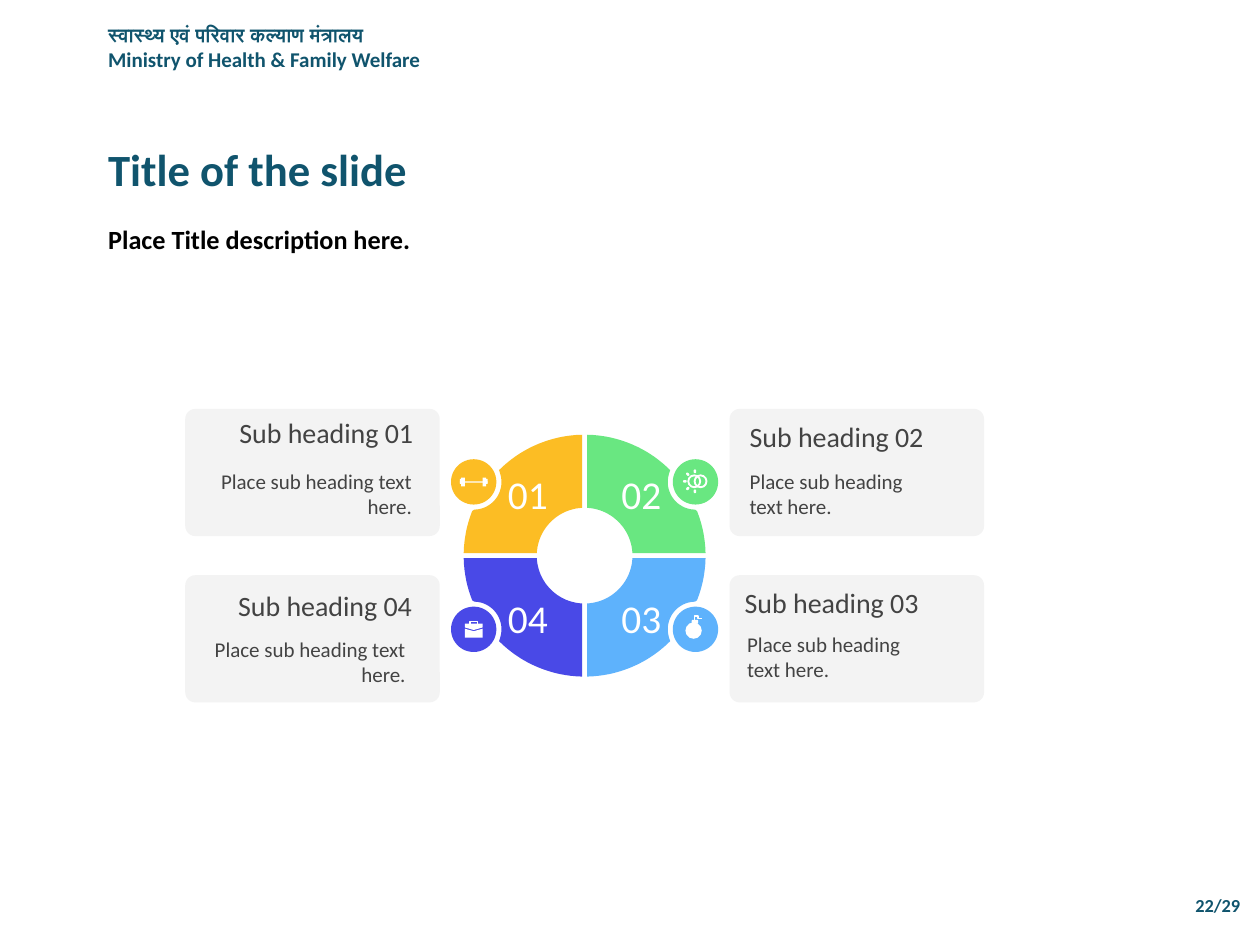
import math
from pptx import Presentation
from pptx.dml.color import RGBColor
from pptx.enum.shapes import MSO_SHAPE
from pptx.enum.text import MSO_ANCHOR, PP_ALIGN
from pptx.util import Inches, Pt

LEFT, CENTER, RIGHT = PP_ALIGN.LEFT, PP_ALIGN.CENTER, PP_ALIGN.RIGHT
TOP, MIDDLE = MSO_ANCHOR.TOP, MSO_ANCHOR.MIDDLE
RECTANGLE, ROUNDED = MSO_SHAPE.RECTANGLE, MSO_SHAPE.ROUNDED_RECTANGLE
OVAL, DONUT = MSO_SHAPE.OVAL, MSO_SHAPE.DONUT
FONT = "Calibri"
COLORS = {
    "teal": "10546D", "black": "000000", "white": "FFFFFF", "panel": "F3F3F3",
    "text": "434343", "yellow": "FCBD24", "green": "69E781",
    "blue": "5EB2FC", "indigo": "4949E7",
}

# Lines as (text, size); boxes as left, top, width, height in inches
PAGE_NUMBER = ([("22/29", 10.5)], (9.33, 7.05, 0.67, 0.28))
MINISTRY = ([("स्वास्थ्य एवं परिवार कल्याण मंत्रालय", 11.2),
             ("Ministry of Health & Family Welfare", 12)], (0.76, 0.13, 3.43, 0.49))
TITLE = ([("Title of the slide", 25.5)], (0.76, 1.16, 4.6, 0.47))
DESCRIPTION = ([("Place Title description here.", 15)], (0.76, 1.8, 5.39, 0.37))
DETAIL = "Place sub heading text here."
# number, colour, horizontal side, vertical side, heading box, detail box
QUARTERS = [
    ("03", "blue", 1, 1, (5.84, 4.61, 1.91, 0.34), (5.86, 4.91, 1.62, 0.6)),
    ("02", "green", 1, -1, (5.88, 3.29, 1.87, 0.35), (5.88, 3.62, 1.62, 0.6)),
    ("04", "indigo", -1, 1, (1.49, 4.61, 1.85, 0.39), (1.56, 4.95, 1.73, 0.6)),
    ("01", "yellow", -1, -1, (1.46, 3.29, 1.89, 0.28), (1.56, 3.62, 1.78, 0.6)),
]

WHEEL_X, WHEEL_Y = 4.64, 4.41
OUTER, INNER, HALF_GAP = 0.96, 0.38, 0.02
BADGE_DX, BADGE_DY, BADGE_RADIUS, BITE_RADIUS = 0.88, 0.585, 0.18, 0.22
PANEL_WIDTH, PANEL_HEIGHT, PANEL_DX, PANEL_DY = 2.02, 1.01, 2.16, 0.66

DUMBBELL = [(3.65, 3.82, 0.22, 0.01), (3.66, 3.79, 0.03, 0.07), (3.83, 3.79, 0.03, 0.07),
            (3.65, 3.8, 0.02, 0.04), (3.85, 3.8, 0.02, 0.04)]
CASE_LID = [(3.69, 4.95), (3.83, 4.95), (3.83, 4.98), (3.76, 5), (3.69, 4.98)]
CASE_BODY = [(3.69, 4.99), (3.76, 5.01), (3.83, 4.99), (3.83, 5.06), (3.69, 5.06)]
CASE_HANDLE = [(3.73, 4.95), (3.73, 4.93), (3.79, 4.93), (3.79, 4.95)]
BOMB_FUSE = [(5.51, 4.92), (5.51, 4.89), (5.54, 4.89), (5.54, 4.91), (5.57, 4.91)]
RINGS_X, RINGS_Y, RING_SIZE, RAY_DISTANCE = 5.51, 3.82, 0.11, 0.08

deck = Presentation()
deck.slide_width, deck.slide_height = Inches(10), Inches(7.5)
page = deck.slides.add_slide(deck.slide_layouts[6])


def rgb(name):
    return RGBColor.from_string(COLORS[name])


def paint(shape, color):
    shape.shadow.inherit = False
    shape.fill.solid()
    shape.fill.fore_color.rgb = rgb(color)
    shape.line.fill.background()
    return shape


def add_preset(kind, box, color="white"):
    return paint(page.shapes.add_shape(kind, *map(Inches, box)), color)


def add_outline(points, closed=True):
    corners = [(Inches(x), Inches(y)) for x, y in points]
    builder = page.shapes.build_freeform(*corners[0])
    builder.add_line_segments(corners[1:], close=closed)
    return builder.convert_to_shape()


def add_stroke(points):
    stroke = add_outline(points, closed=False)
    stroke.shadow.inherit = False
    stroke.fill.background()
    stroke.line.color.rgb = rgb("white")
    stroke.line.width = Pt(0.75)


def write(shape, lines, color, align=LEFT, anchor=TOP, bold=False, insets=None):
    frame = shape.text_frame
    frame.word_wrap = True
    frame.vertical_anchor = anchor
    if insets:
        frame.margin_left, frame.margin_right = map(Inches, insets)
        frame.margin_top = frame.margin_bottom = Inches(0.07)
    frame.text = "\n".join(text for text, size in lines)
    for para, (text, size) in zip(frame.paragraphs, lines):
        para.alignment = align
        font = para.runs[0].font
        font.name, font.size, font.bold = FONT, Pt(size), bold
        font.color.rgb = rgb(color)
    return frame


def add_text(lines, box, color, **style):
    return write(page.shapes.add_textbox(*map(Inches, box)), lines, color, **style)


def quarter_points(side_x, side_y, steps=90):
    """Quarter ring with a round bite around its badge."""
    distance = math.hypot(BADGE_DX, BADGE_DY)
    badge_angle = math.atan2(BADGE_DY, BADGE_DX)

    def edge(angle):
        across = distance * math.sin(angle - badge_angle)
        if abs(across) >= BITE_RADIUS:
            return OUTER
        along = distance * math.cos(angle - badge_angle)
        return min(OUTER, along - math.sqrt(BITE_RADIUS ** 2 - across ** 2))

    def arc(radius, limit):
        start = math.asin(HALF_GAP / limit)
        span = math.pi / 2 - 2 * start
        angles = [start + span * step / steps for step in range(steps + 1)]
        return [(WHEEL_X + side_x * radius(angle) * math.cos(angle),
                 WHEEL_Y + side_y * radius(angle) * math.sin(angle)) for angle in angles]

    return arc(edge, OUTER) + arc(lambda angle: INNER, INNER)[::-1]


def add_quarter(number, color, side_x, side_y, heading_box, detail_box):
    segment = paint(add_outline(quarter_points(side_x, side_y)), color)
    insets = (0.07, 0.15) if side_x > 0 else (0.15, 0.07)
    write(segment, [(number, 22.5)], "white", align=CENTER, anchor=MIDDLE, insets=insets)
    add_preset(OVAL, (WHEEL_X + side_x * BADGE_DX - BADGE_RADIUS,
                      WHEEL_Y + side_y * BADGE_DY - BADGE_RADIUS,
                      2 * BADGE_RADIUS, 2 * BADGE_RADIUS), color)
    panel = add_preset(ROUNDED, (WHEEL_X + side_x * PANEL_DX - PANEL_WIDTH / 2,
                                 WHEEL_Y + side_y * PANEL_DY - PANEL_HEIGHT / 2,
                                 PANEL_WIDTH, PANEL_HEIGHT), "panel")
    panel.adjustments[0] = 0.08
    align = LEFT if side_x > 0 else RIGHT
    for text, size, box in (("Sub heading " + number, 16, heading_box),
                            (DETAIL, 12, detail_box)):
        add_text([(text, size)], box, "text", align=align, anchor=MIDDLE, insets=(0.07, 0.07))


def add_rings_icon():
    for center_x in (RINGS_X, RINGS_X + 0.05):
        ring = add_preset(DONUT, (center_x - RING_SIZE / 2, RINGS_Y - RING_SIZE / 2,
                                  RING_SIZE, RING_SIZE))
        ring.adjustments[0] = 0.14
    for degrees in range(90, 271, 45):
        angle = math.radians(degrees)
        ray = add_preset(ROUNDED, (RINGS_X + RAY_DISTANCE * math.cos(angle) - 0.01,
                                   RINGS_Y + RAY_DISTANCE * math.sin(angle) - 0.01, 0.03, 0.02))
        ray.adjustments[0] = 0.5
        ray.rotation = degrees


add_text(*PAGE_NUMBER, "teal", align=CENTER, bold=True)
add_text(*MINISTRY, "teal", bold=True)
add_text(*TITLE, "teal", bold=True).paragraphs[0].line_spacing = 0.8
add_text(*DESCRIPTION, "black", bold=True).paragraphs[0].line_spacing = Pt(12.4)

for quarter in QUARTERS:
    add_quarter(*quarter)

add_rings_icon()
for bar in DUMBBELL:
    add_preset(RECTANGLE, bar)
for part in (CASE_LID, CASE_BODY):
    paint(add_outline(part), "white")
add_stroke(CASE_HANDLE)
add_preset(OVAL, (5.44, 4.94, 0.13, 0.13))
add_preset(ROUNDED, (5.49, 4.92, 0.05, 0.03))
add_stroke(BOMB_FUSE)

deck.save("out.pptx")
